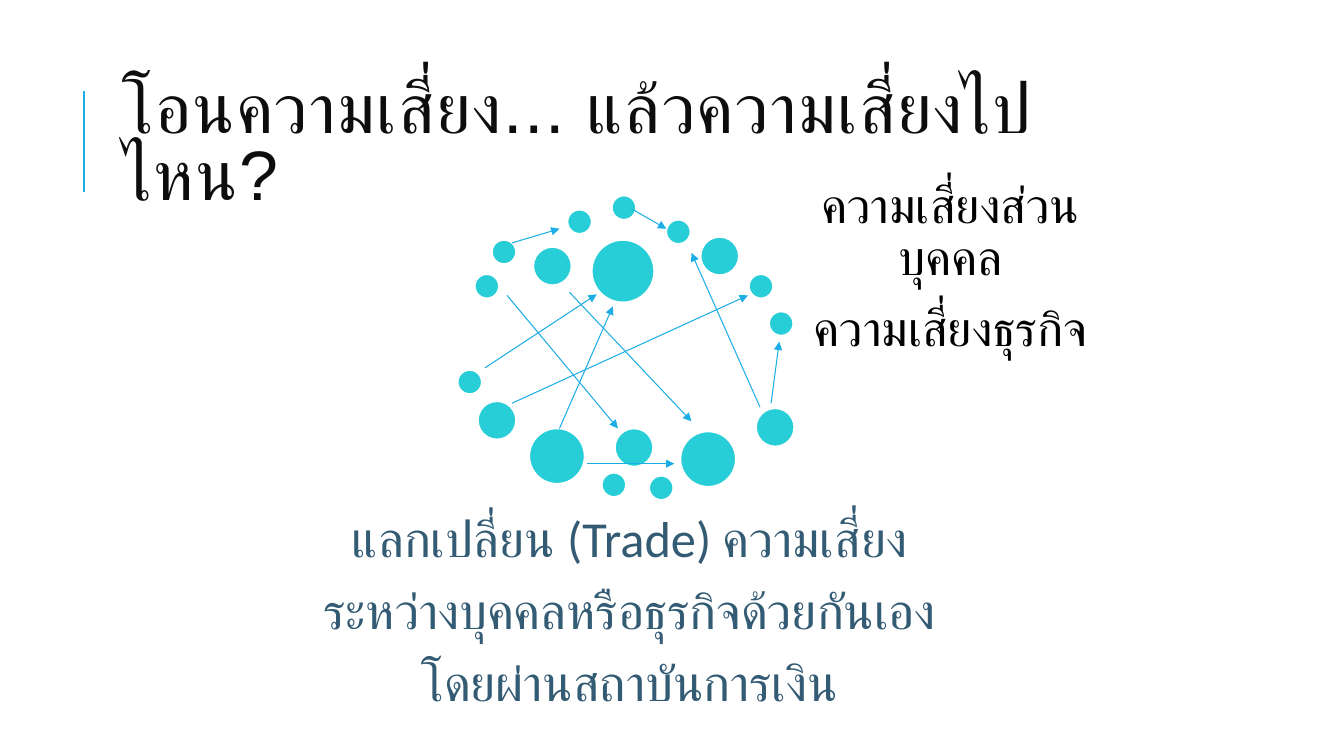
import pptx
import pptx.dml.color
import pptx.enum.shapes
import pptx.enum.text
import pptx.oxml
import pptx.oxml.ns
import pptx.util
from lxml import etree

RGB = pptx.dml.color.RGBColor
WHITE = RGB(0xFF, 0xFF, 0xFF)
BLACK = RGB(0, 0, 0)
INK = RGB(0x0D, 0x0D, 0x0D)
NAVY = RGB(0x33, 0x5B, 0x74)
BLUE = RGB(0x1C, 0xAD, 0xE4)
TEAL = RGB(0x27, 0xCE, 0xD7)

ALIGN = pptx.enum.text.PP_ALIGN
ANCHOR = pptx.enum.text.MSO_ANCHOR
SHAPE = pptx.enum.shapes.MSO_SHAPE
LINE = pptx.enum.shapes.MSO_CONNECTOR
qn = pptx.oxml.ns.qn

# Square grid cells: all places below are in columns and rows.
CELL = 0.1
COLS, ROWS = 133.33, 75

# Circle centres by diameter
DOTS = {
    2.4: [(48.3, 28.4), (50, 25), (57.5, 22), (61.9, 20.6), (67.3, 23),
          (75.5, 28.4), (77.5, 32.1), (46.6, 37.9), (60.9, 48.1), (65.6, 48.4)],
    3.8: [(54.8, 26.4), (71.4, 25.4), (49.3, 41.7), (62.9, 44.4), (76.9, 42.4)],
    5.5: [(55.25, 45.25), (70.25, 45.55)],
    6.2: [(61.8, 26.9)],
}

TRADES = [
    ((55.5, 42.5), (60.8, 30.4)),
    ((56.5, 29), (68.6, 41.8)),
    ((50.8, 40), (74.2, 29.3)),
    ((75.4, 40.4), (68.6, 25.1)),
    ((50.3, 29.3), (61.3, 42.5)),
    ((48.1, 36.5), (59.2, 29.2)),
    ((62.8, 20.8), (66.1, 22.7)),
    ((58.2, 46), (66.9, 46)),
    ((50.8, 24.1), (55.5, 22.7)),
    ((76.5, 40), (77.3, 33.9)),
]


def grid(*cells):
    return [pptx.util.Inches(n * CELL) for n in cells]


class Board:
    def __init__(self, deck):
        self.slide = deck.slides.add_slide(deck.slide_layouts[6])
        self.shapes = self.slide.shapes

    def text(self, box, lines, size, color, font="Calibri", align=ALIGN.CENTER,
             inset=0.5, lead=0.9, after=35, track=0):
        """Add one paragraph per line; after is in percent, track in points."""
        frame = self.shapes.add_textbox(*grid(*box)).text_frame
        frame.word_wrap = True
        frame.vertical_anchor = ANCHOR.MIDDLE
        frame.margin_left, frame.margin_right = grid(inset, inset)
        frame.margin_top = frame.margin_bottom = pptx.util.Inches(0.05)
        for i, line in enumerate(lines):
            para = frame.add_paragraph() if i else frame.paragraphs[0]
            para.alignment = align
            para.line_spacing = lead
            if after:
                gap = etree.SubElement(para._p.get_or_add_pPr(), qn("a:spcAft"))
                etree.SubElement(gap, qn("a:spcPct"), val=str(after * 1000))
            run = para.add_run()
            run.text = line
            run.font.name = font
            run.font.size = pptx.util.Pt(size)
            run.font.color.rgb = color
            if track:
                run._r.get_or_add_rPr().set("spc", str(track * 100))

    def dot(self, mid, size):
        left, top = (n - size / 2 for n in mid)
        dot = self.shapes.add_shape(SHAPE.OVAL, *grid(left, top, size, size))
        dot.shadow.inherit = False
        dot.fill.solid()
        dot.fill.fore_color.rgb = TEAL
        dot.line.color.rgb = WHITE
        dot.line.width = pptx.util.Pt(1.25)

    def rule(self, start, end, width, arrow=False):
        rule = self.shapes.add_connector(LINE.STRAIGHT, *grid(*start, *end))
        rule.line.color.rgb = BLUE
        rule.line.width = pptx.util.Pt(width)
        if arrow:
            etree.SubElement(rule.line._get_or_add_ln(), qn("a:tailEnd"),
                             type="triangle")
        etree.SubElement(rule._element.spPr, qn("a:effectLst"))


def main():
    deck = pptx.Presentation()
    deck.slide_width, deck.slide_height = grid(COLS, ROWS)
    board = Board(deck)

    board.rule((8.3, 19), (8.3, 9), 1.5)
    board.text((11.2, 6.4, 106.3, 16.4), ["โอนความเสี่ยง... แล้วความเสี่ยงไปไหน?"],
               50, INK, font="Arial", align=ALIGN.LEFT, inset=1,
               lead=0.8, after=0, track=1)
    board.text((76.5, 19.4, 35.6, 14.5),
               ["ความเสี่ยงส่วนบุคคล", "ความเสี่ยงธุรกิจ"], 35, BLACK)
    board.text((7.5, 54.1, 109.9, 13.5),
               ["แลกเปลี่ยน (Trade) ความเสี่ยง",
                "ระหว่างบุคคลหรือธุรกิจด้วยกันเอง",
                "โดยผ่านสถาบันการเงิน"], 36, NAVY)

    for size, mids in DOTS.items():
        for mid in mids:
            board.dot(mid, size)
    for start, end in TRADES:
        board.rule(start, end, 0.75, arrow=True)

    deck.save("out.pptx")


if __name__ == "__main__":
    main()
